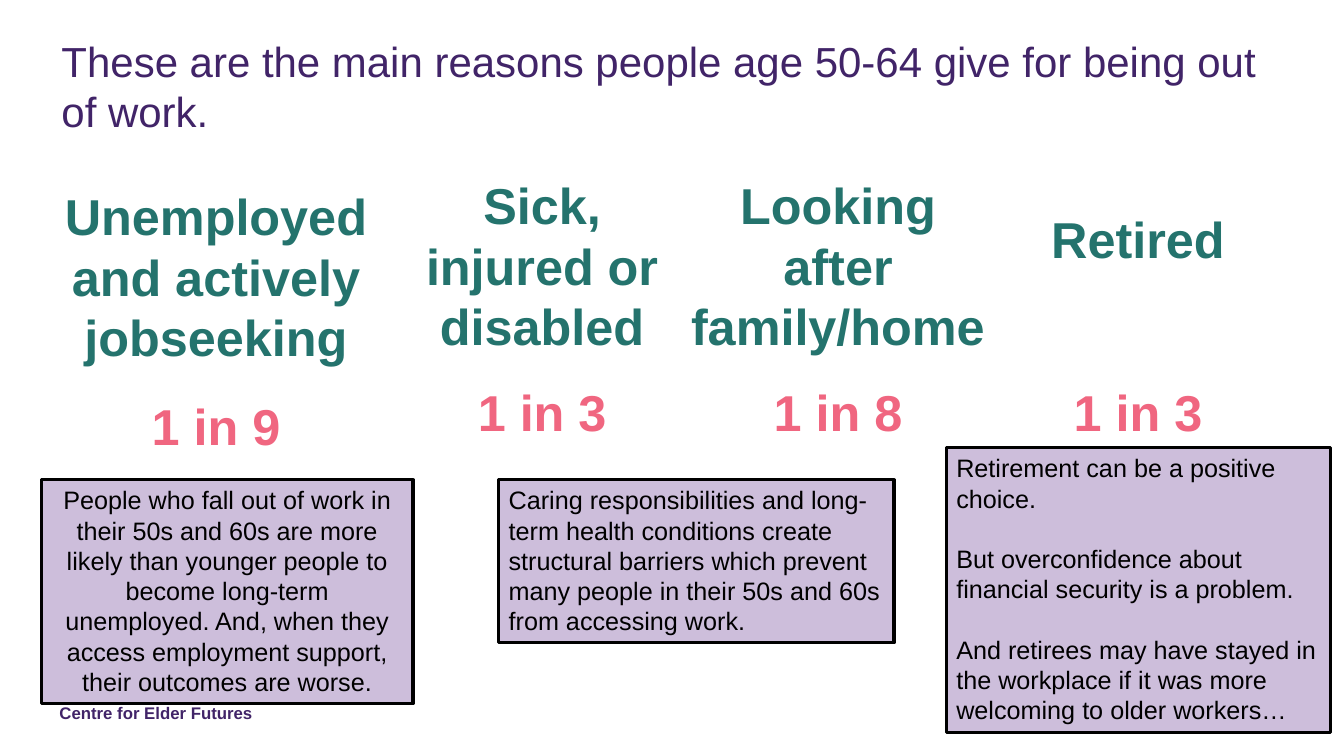
from pptx import Presentation
from pptx.dml.color import RGBColor as RGB
from pptx.enum.shapes import MSO_SHAPE as Shape
from pptx.enum.text import MSO_ANCHOR as Anchor, PP_ALIGN as Align
from pptx.util import Cm, Pt

PURPLE = RGB(0x41, 0x24, 0x68)
TEAL = RGB(0x24, 0x73, 0x6D)
PINK = RGB(0xF0, 0x66, 0x80)
LILAC = RGB(0xCD, 0xBE, 0xDB)
BLACK = RGB(0, 0, 0)

RATE_W, RATE_H = 4.17, 1.8

REASONS = [
    ("Unemployed and actively jobseeking", "1 in 9", (1.04, 4.55, 8.81, 4.88), 9.83),
    ("Sick, injured or disabled", "1 in 3", (9.78, 4.27, 7.77, 4.88), 9.47),
    ("Looking after family/home", "1 in 8", (17.07, 4.27, 8.1, 4.88), 9.47),
    ("Retired", "1 in 3", (25.86, 5.11, 5.64, 1.8), 9.47),
]

NOTES = [
    (["People who fall out of work in their 50s and 60s are more likely than "
      "younger people to become long-term unemployed. And, when they access "
      "employment support, their outcomes are worse."],
     (1.04, 12.09, 9.37, 5.64), Align.CENTER),
    (["Caring responsibilities and long-term health conditions create structural "
      "barriers which prevent many people in their 50s and 60s from accessing work."],
     (12.57, 12.09, 9.96, 4.11), Align.LEFT),
    (["Retirement can be a positive choice.",
      "But overconfidence about financial security is a problem.",
      "And retirees may have stayed in the workplace if it was more welcoming "
      "to older workers…"],
     (23.85, 11.28, 9.68, 7.19), Align.LEFT),
]


def write(frame, *lines, size=18, color=BLACK, bold=False, align=Align.LEFT):
    """Fill a text frame with one paragraph per line, a line's height apart."""
    frame.word_wrap = True
    frame.vertical_anchor = Anchor.TOP
    for i, line in enumerate(lines):
        para = frame.add_paragraph() if i else frame.paragraphs[0]
        para.text = line
        para.alignment = align
        para.line_spacing = Pt(size * 1.2)
        if i:
            para.space_before = Pt(size * 1.2)
        font = para.font
        font.name, font.size, font.bold = "Arial", Pt(size), bold
        font.color.rgb = color


def label(slide, area, text, **style):
    """Add a plain text box and return its frame."""
    frame = slide.shapes.add_textbox(*map(Cm, area)).text_frame
    write(frame, text, **style)
    return frame


def reason(slide, name, rate, area, top):
    """Add a reason heading with its rate centred below."""
    left, _, width, _ = area
    style = dict(size=36, bold=True, align=Align.CENTER)
    label(slide, area, name, color=TEAL, **style)
    mid = left + (width - RATE_W) / 2
    label(slide, (mid, top, RATE_W, RATE_H), rate, color=PINK, **style)


def note(slide, lines, area, align):
    """Add an outlined lilac box of commentary."""
    box = slide.shapes.add_shape(Shape.RECTANGLE, *map(Cm, area))
    box.shadow.inherit = False
    box.fill.solid()
    box.fill.fore_color.rgb = LILAC
    box.line.color.rgb = BLACK
    box.line.width = Pt(2.25)
    write(box.text_frame, *lines, align=align)


def main():
    """Build the slide and save it."""
    deck = Presentation()
    deck.slide_width, deck.slide_height = Cm(33.87), Cm(19.05)
    slide = deck.slides.add_slide(deck.slide_layouts[6])

    foot = label(slide, (1.5, 17.7, 9.04, 0.51), "Centre for Elder Futures",
                 size=12, color=PURPLE, bold=True)
    foot.margin_left = foot.margin_right = foot.margin_top = foot.margin_bottom = 0
    label(slide, (1.3, 0.76, 30.86, 2.87),
          "These are the main reasons people age 50-64 give for being out of work.",
          size=30, color=PURPLE)
    for item in REASONS:
        reason(slide, *item)
    for item in NOTES:
        note(slide, *item)
    deck.save("out.pptx")


if __name__ == "__main__":
    main()
